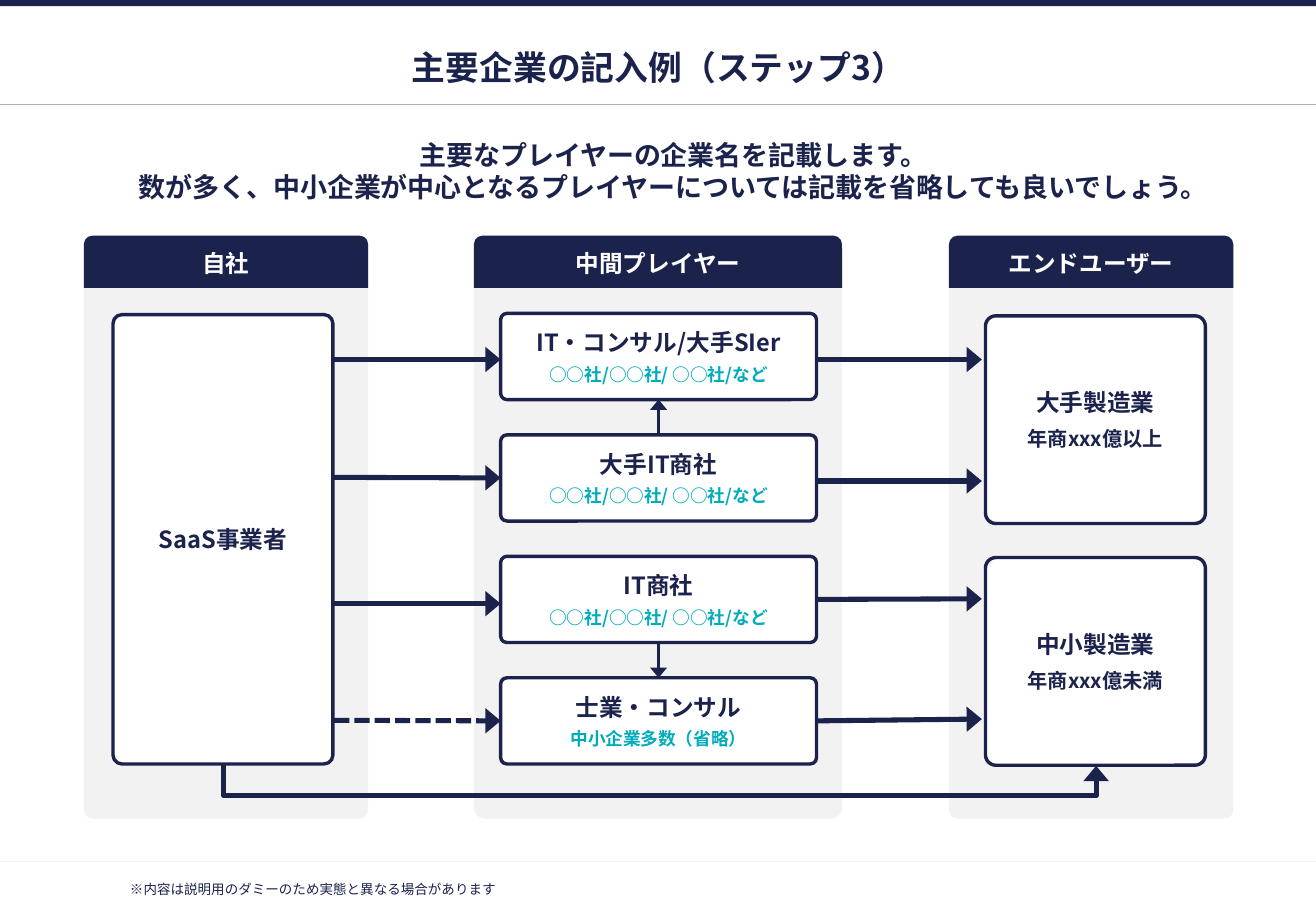
import pptx
import pptx.util
from lxml import etree
from pptx.dml.color import RGBColor
from pptx.enum.dml import MSO_LINE
from pptx.enum.shapes import MSO_CONNECTOR, MSO_SHAPE
from pptx.enum.text import MSO_ANCHOR, MSO_AUTO_SIZE, PP_ALIGN
from pptx.oxml.ns import qn
from pptx.util import Inches

NAVY = RGBColor(0x1B, 0x22, 0x4C)
TEAL = RGBColor(0x00, 0xAC, 0xBA)
WHITE = RGBColor(0xFF, 0xFF, 0xFF)
PANEL_GRAY = RGBColor(0xF2, 0xF2, 0xF2)
RULE_GRAY = RGBColor(0xAF, 0xAF, 0xAF)
FONT = "Noto Sans CJK JP"
TOP, LEFT, BOTTOM, RIGHT = range(4)


class PlayerMapSlide:
    """Holds the style and the current slide."""

    def __init__(self, presentation):
        self.slide = presentation.slides.add_slide(presentation.slide_layouts[1])
        self.shapes = self.slide.shapes

    def set_text(self, shape, lines, align=PP_ALIGN.CENTER, space_after=0, inset=None,
                 anchor=MSO_ANCHOR.MIDDLE, bold=True):
        """Each line is (text, size, color)."""
        frame = shape.text_frame
        frame.word_wrap = True
        frame.auto_size = MSO_AUTO_SIZE.NONE
        frame.vertical_anchor = anchor
        if inset is not None:
            frame.margin_left = frame.margin_right = Inches(inset)
            frame.margin_top = frame.margin_bottom = Inches(inset)
        frame.text = "\n".join(text for text, _, _ in lines)
        for paragraph, (_, size, color) in zip(frame.paragraphs, lines):
            paragraph.alignment = align
            paragraph.space_before = pptx.util.Pt(0)
            paragraph.space_after = pptx.util.Pt(space_after)
            for run in paragraph.runs:
                run.font.size = pptx.util.Pt(size)
                run.font.bold = bold
                run.font.name = FONT
                run.font.color.rgb = color
                latin = run._r.get_or_add_rPr().find(qn("a:latin"))
                latin.addnext(latin.makeelement(qn("a:ea"), {"typeface": FONT}))

    def place(self, shape, left, top, width, height):
        shape.left, shape.top = Inches(left), Inches(top)
        shape.width, shape.height = Inches(width), Inches(height)

    def title(self, text, *area):
        self.place(self.shapes.title, *area)
        self.set_text(self.shapes.title, [(text, 20, NAVY)], inset=0.04)

    def body(self, texts, *area):
        body = self.slide.placeholders[1]
        self.place(body, *area)
        self.set_text(body, [(text, 16, NAVY) for text in texts], inset=0.04,
                      anchor=MSO_ANCHOR.TOP)
        for paragraph in body.text_frame.paragraphs:
            properties = paragraph._p.get_or_add_pPr()
            properties.set("marL", str(Inches(0.5)))
            properties.set("indent", str(Inches(-0.25)))
            etree.SubElement(properties, qn("a:buNone"))

    def note(self, text, *area):
        box = self.shapes.add_textbox(*map(Inches, area))
        self.set_text(box, [(text, 8, NAVY)], PP_ALIGN.LEFT, inset=0.04,
                      anchor=MSO_ANCHOR.TOP, bold=False)

    def block(self, kind, area, fill, radius=None, outline=None):
        shape = self.shapes.add_shape(kind, *map(Inches, area))
        shape.shadow.inherit = False
        shape.fill.solid()
        shape.fill.fore_color.rgb = fill
        if radius is not None:
            shape.adjustments[0] = radius
        if outline is None:
            shape.line.fill.background()
        else:
            shape.line.color.rgb = outline
            shape.line.width = pptx.util.Pt(2)
        return shape

    def column(self, heading, left, width):
        self.block(MSO_SHAPE.ROUNDED_RECTANGLE, (left, 1.94, width, 4.8), PANEL_GRAY, 0.031)
        header = self.block(MSO_SHAPE.ROUND_2_SAME_RECTANGLE, (left, 1.94, width, 0.43), NAVY)
        self.set_text(header, [(heading, 14, WHITE)])

    def box(self, area, radius, lines, space_after=6, inset=None):
        shape = self.block(MSO_SHAPE.ROUNDED_RECTANGLE, area, WHITE, radius, NAVY)
        self.set_text(shape, lines, space_after=space_after, inset=inset)
        return shape

    def line(self, start, end, color, width, kind=MSO_CONNECTOR.STRAIGHT):
        connector = self.shapes.add_connector(kind, *map(Inches, start + end))
        connector.line.color.rgb = color
        connector.line.width = pptx.util.Pt(width)
        etree.SubElement(connector._element.spPr, qn("a:effectLst"))
        return connector

    def arrow(self, start, end, width=3, begin=None, finish=None, dotted=False,
              kind=MSO_CONNECTOR.STRAIGHT):
        connector = self.line(start, end, NAVY, width, kind)
        if dotted:
            connector.line.dash_style = MSO_LINE.SQUARE_DOT
        outline = connector._element.spPr.find(qn("a:ln"))
        etree.SubElement(outline, qn("a:tailEnd"), type="triangle", w="lg", len="med")
        if begin:
            connector.begin_connect(*begin)
        if finish:
            connector.end_connect(*finish)
        return connector

    def bypass_arrow(self, left, right, bottom, drop):
        """U-shaped elbow: a thin upright connector, turned and flipped."""
        connector = self.arrow((left, bottom), (right, bottom), kind=MSO_CONNECTOR.ELBOW)
        thickness, span = 0.01, right - left
        self.place(connector, (left + right - thickness) / 2, bottom - span / 2,
                   thickness, span)
        properties = connector._element.spPr
        frame = properties.find(qn("a:xfrm"))
        frame.set("rot", str(270 * 60000))
        frame.set("flipH", "1")
        guides = properties.find(qn("a:prstGeom")).find(qn("a:avLst"))
        etree.SubElement(guides, qn("a:gd"), name="adj1",
                         fmla=f"val {round(drop / thickness * 100000)}")


def main():
    presentation = pptx.Presentation()
    presentation.slide_width, presentation.slide_height = Inches(10.83), Inches(7.5)
    page = PlayerMapSlide(presentation)

    # Page frame
    page.block(MSO_SHAPE.RECTANGLE, (0, 0, 10.83, 0.05), NAVY)
    for y, color in ((0.86, RULE_GRAY), (7.09, PANEL_GRAY)):
        page.line((0, y), (10.83, y), color, 0.75)

    # Title, message and footnote
    page.title("主要企業の記入例（ステップ3）", 0.69, 0.34, 9.46, 0.42)
    page.body(["主要なプレイヤーの企業名を記載します。",
               "数が多く、中小企業が中心となるプレイヤーについては記載を省略しても良いでしょう。"],
              0.69, 1.1, 9.46, 0.65)
    page.note("※内容は説明用のダミーのため実態と異なる場合があります", 1.03, 7.21, 7.87, 0.2)

    # Columns
    for heading, left, width in (("自社", 0.69, 2.34), ("中間プレイヤー", 3.9, 3.03),
                                 ("エンドユーザー", 7.81, 2.34)):
        page.column(heading, left, width)

    # Own company and end users
    page.box((0.93, 2.59, 1.81, 3.7), 0.041, [("SaaS事業者", 14, NAVY)])
    for top, name, revenue in ((2.6, "大手製造業", "年商xxx億以上"),
                               (4.59, "中小製造業", "年商xxx億未満")):
        page.box((8.11, top, 1.81, 1.71), 0.05, [(name, 14, NAVY), (revenue, 12, NAVY)])

    # Intermediate players
    companies = "○○社/○○社/ ○○社/など"
    players = [("IT・コンサル/大手SIer", companies), ("大手IT商社", companies),
               ("IT商社", companies), ("士業・コンサル", "中小企業多数（省略）")]
    consultant, large_trader, trader, adviser = [
        page.box((4.12, 2.58 + row, 2.6, 0.71), 0.074,
                 [(name, 14, NAVY), (examples, 10.5, TEAL)], 4, 0.04)
        for row, (name, examples) in enumerate(players)]

    # Arrows from own company to players
    for y, finish, dotted in ((2.96, None, False), (3.93, (large_trader, LEFT), False),
                              (4.97, None, False), (5.93, (adviser, LEFT), True)):
        page.arrow((2.75, y), (4.12, y), finish=finish, dotted=dotted)

    # Arrows from players to end users
    for y, begin in ((2.96, None), (3.96, None), (4.93, (trader, RIGHT)),
                     (5.92, (adviser, RIGHT))):
        page.arrow((6.72, y), (8.08, y), begin=begin)

    # Arrows between players, and direct sales
    page.arrow((5.42, 3.58), (5.42, 3.29), 2, (large_trader, TOP), (consultant, BOTTOM))
    page.arrow((5.42, 5.29), (5.42, 5.58), 2, (trader, BOTTOM), (adviser, TOP))
    page.bypass_arrow(1.84, 9.02, 6.3, 0.26)

    presentation.save("out.pptx")


if __name__ == "__main__":
    main()
